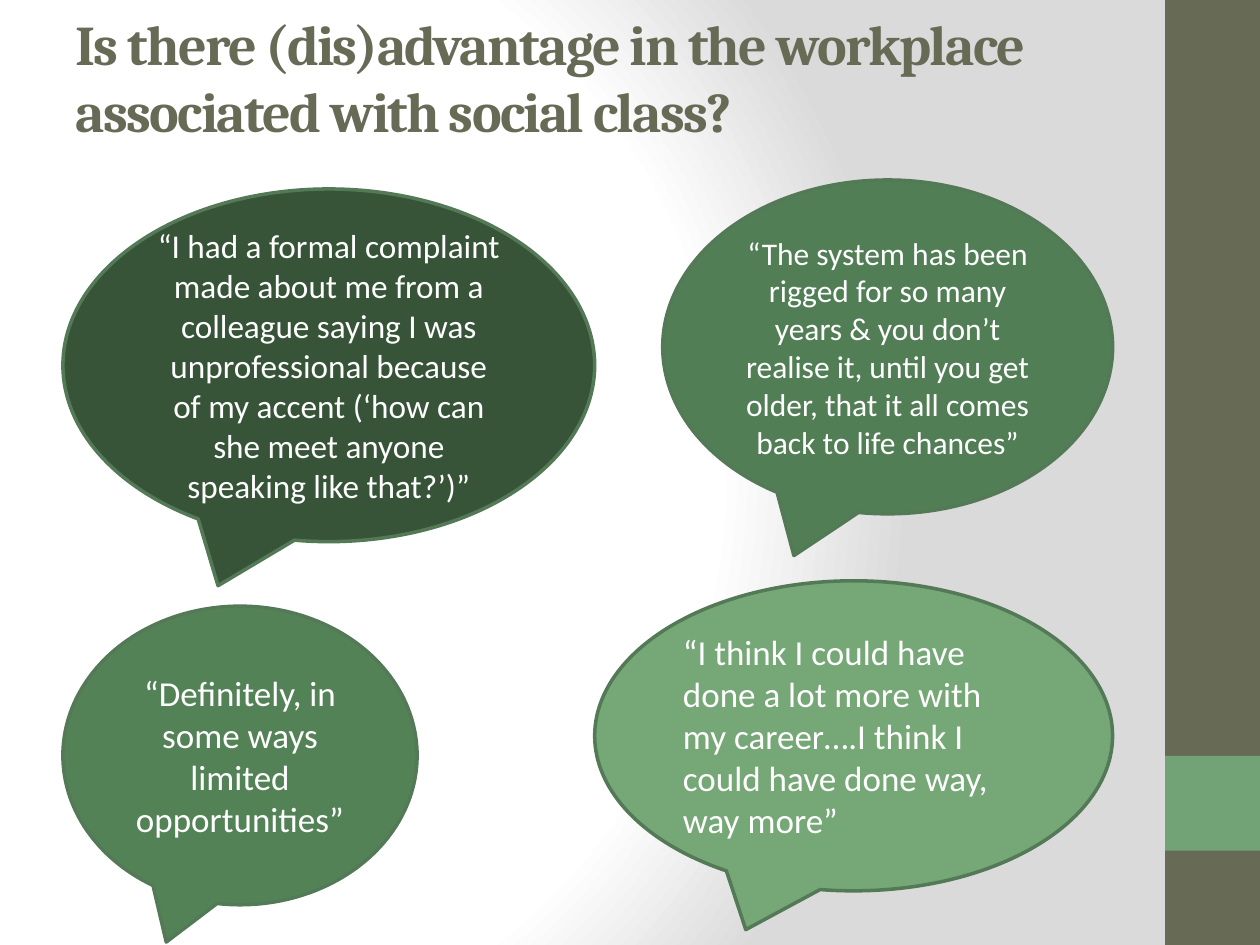
from pptx import Presentation
from pptx.dml.color import RGBColor
from pptx.enum.shapes import MSO_SHAPE as Kind
from pptx.enum.text import MSO_ANCHOR as Anchor, MSO_AUTO_SIZE as Fit, PP_ALIGN as Align
from pptx.oxml import parse_xml
from pptx.util import Cm, Pt

WIDE, HIGH, BAR = 25.4, 19.05, 1.91
OLIVE, EDGE, WHITE = "676A55", "547957", "FFFFFF"
SHADE = """<a:gradFill xmlns:a="http://schemas.openxmlformats.org/drawingml/2006/main" rotWithShape="1">
<a:gsLst>
<a:gs pos="0"><a:srgbClr val="FFFFFF"/></a:gs>
<a:gs pos="75000"><a:srgbClr val="FFFFFF"/></a:gs>
<a:gs pos="100000"><a:srgbClr val="DADADA"/></a:gs>
</a:gsLst>
<a:path path="circle"><a:fillToRect l="20000" t="50000" r="100000" b="50000"/></a:path>
</a:gradFill>"""
QUOTES = [
    ((11.99, 11.71, 10.44, 6.25), "76A776", 20, Align.LEFT,
     "“I think I could have done a lot more with my career….I think I could "
     "have done way, way more”"),
    ((1.27, 12.22, 7.14, 6.02), "548257", 20, Align.CENTER,
     "“Definitely, in some ways limited opportunities”"),
    ((13.36, 3.63, 9.07, 6.73), "527E56", 18, Align.CENTER,
     "“The system has been rigged for so many years & you don’t realise it, "
     "until you get older, that it all comes back to life chances”"),
    ((1.27, 3.81, 10.72, 7.11), "375439", 19, Align.CENTER,
     "“I had a formal complaint made about me from a colleague saying I was "
     "unprofessional because of my accent (‘how can she meet anyone speaking "
     "like that?’)”"),
]


def tint(code):
    """Turn a hex string into a colour."""
    return RGBColor.from_string(code)


def write(shape, text, size=20, font="Calibri", color=WHITE, bold=False,
          align=Align.CENTER, track=0):
    """Fill a shape with one formatted paragraph."""
    frame = shape.text_frame
    frame.word_wrap = True
    frame.auto_size = Fit.NONE
    frame.vertical_anchor = Anchor.MIDDLE
    para = frame.paragraphs[0]
    para.alignment = align
    run = para.add_run()
    run.text = text
    face = run.font
    face.size, face.name, face.bold = Pt(size), font, bold
    face.color.rgb = tint(color)
    if track:
        run._r.get_or_add_rPr().set("spc", str(track * 100))


def draw(slide, kind, box, fill, line=None):
    """Add a flat preset shape in a box."""
    shape = slide.shapes.add_shape(kind, *map(Cm, box))
    shape.shadow.inherit = False
    shape.fill.solid()
    shape.fill.fore_color.rgb = tint(fill)
    if line:
        shape.line.color.rgb = tint(line)
        shape.line.width = Pt(2)
    else:
        shape.line.fill.background()
    return shape


def shade(slide):
    """Give the slide its round gradient."""
    slide.background.fill.gradient()
    base = slide._element.cSld.bg.bgPr
    base.replace(base[0], parse_xml(SHADE))


def band(slide, box):
    """Draw the side bar and its square accent."""
    left, top, width, height = box
    draw(slide, Kind.RECTANGLE, box, OLIVE)
    draw(slide, Kind.RECTANGLE,
         (left, top + height * 0.8, width, width), "72A376")


def head(slide, box, text):
    """Place and format the title."""
    title = slide.shapes.title
    title.left, title.top, title.width, title.height = map(Cm, box)
    write(title, text, size=32, font="Cambria", color=OLIVE, bold=True,
          align=Align.LEFT, track=-1)


def quote(slide, box, fill, size, align, text):
    """Draw one speech bubble with its words."""
    shape = draw(slide, Kind.OVAL_CALLOUT, box, fill, EDGE)
    write(shape, text, size=size, align=align)


def main():
    """Build and save the slide."""
    deck = Presentation()
    deck.slide_width, deck.slide_height = Cm(WIDE), Cm(HIGH)
    slide = deck.slides.add_slide(deck.slide_layouts[5])
    shade(slide)
    band(slide, (WIDE - BAR, 0, BAR, HIGH))
    head(slide, (1.27, 0.25, 21.16, 2.59),
         "Is there (dis)advantage in the workplace associated with social class?")
    for item in QUOTES:
        quote(slide, *item)
    deck.save("out.pptx")


if __name__ == "__main__":
    main()
